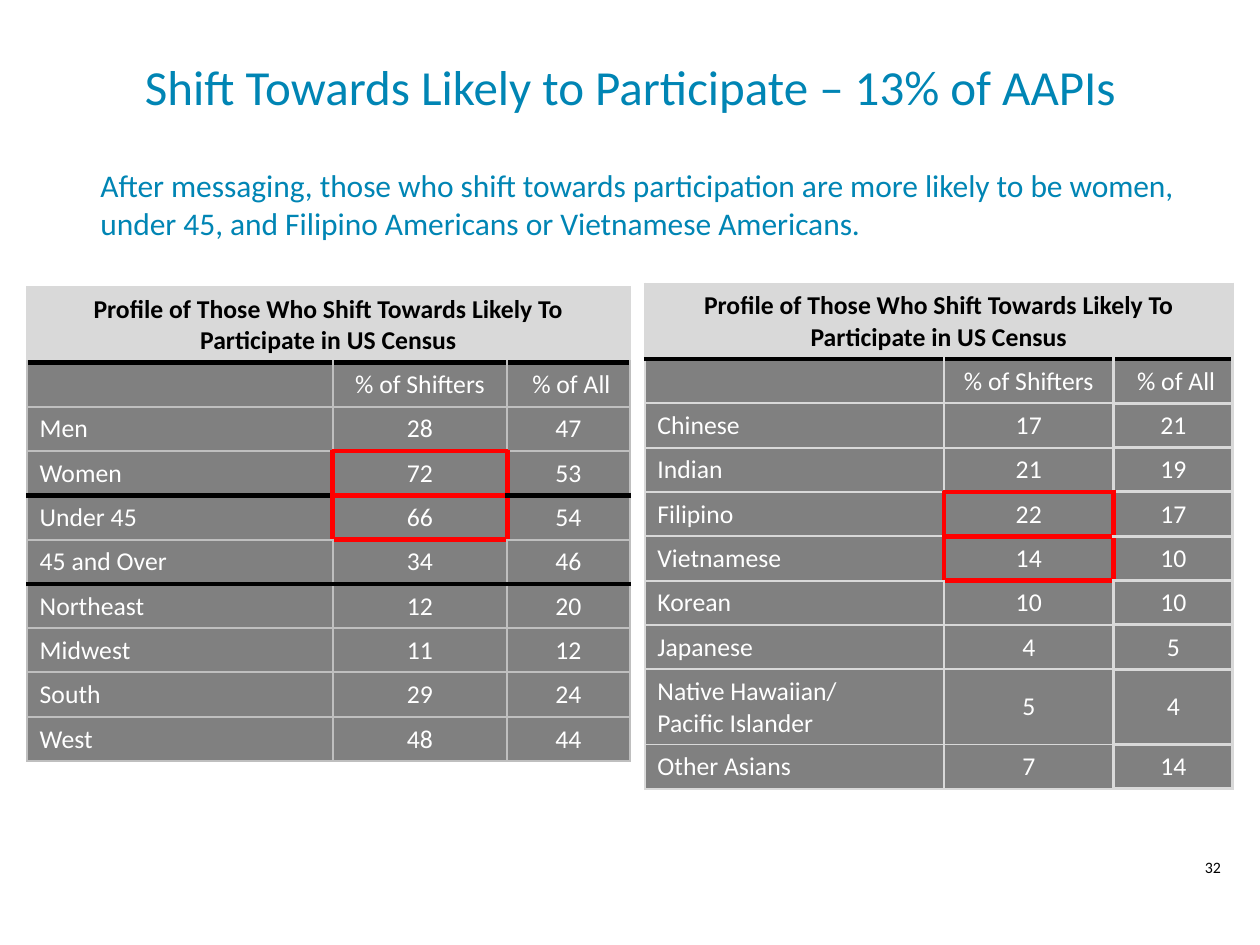
"""Build a slide with two census profile tables under a title and a summary line."""
from lxml import etree
from pptx import Presentation
from pptx.dml.color import RGBColor
from pptx.enum.text import MSO_ANCHOR, MSO_AUTO_SIZE, PP_ALIGN
from pptx.oxml.ns import qn
from pptx.util import Cm, Pt

LEFT, CENTER = PP_ALIGN.LEFT, PP_ALIGN.CENTER
MIDDLE = MSO_ANCHOR.MIDDLE
NO_AUTOFIT = MSO_AUTO_SIZE.NONE
BLUE = RGBColor(0x00, 0x85, 0xB4)
BLACK = RGBColor(0x00, 0x00, 0x00)
WHITE = RGBColor(0xFF, 0xFF, 0xFF)
RED = RGBColor(0xFF, 0x00, 0x00)
GRAY = RGBColor(0x80, 0x80, 0x80)
SILVER = RGBColor(0xBF, 0xBF, 0xBF)
LIGHT_GRAY = RGBColor(0xD9, 0xD9, 0xD9)

HEADING = "Profile of Those Who Shift Towards Likely To Participate in US Census"
COLUMN_LABELS = ("", "% of Shifters", " % of All")
ROW_HEIGHT, TALL_ROW_HEIGHT = Cm(0.67), Cm(1.14)
SIDES = {"lnL": (0, -1), "lnR": (0, 1), "lnT": (-1, 0), "lnB": (1, 0)}

PROFILES = [
    {
        "left": 0.41, "top": 4.34, "widths": (4.62, 2.64, 1.85),
        "grid": SILVER, "last_column_line": 1,
        "highlights": {(3, 1), (4, 1)}, "section_ends": {0, 3, 5},
        "rows": [
            ("Men", "28", "47"), ("Women", "72", "53"),
            ("Under 45", "66", "54"), ("45 and Over", "34", "46"),
            ("Northeast", "12", "20"), ("Midwest", "11", "12"),
            ("South", "29", "24"), ("West", "48", "44"),
        ],
    },
    {
        "left": 9.75, "top": 4.29, "widths": (4.52, 2.57, 1.8),
        "grid": LIGHT_GRAY, "last_column_line": 1.5,
        "highlights": {(4, 1), (5, 1)}, "section_ends": {0},
        "rows": [
            ("Chinese", "17", "21"), ("Indian", "21", "19"),
            ("Filipino", "22", "17"), ("Vietnamese", "14", "10"),
            ("Korean", "10", "10"), ("Japanese", "4", "5"),
            ("Native Hawaiian/\nPacific Islander", "5", "4"),
            ("Other Asians", "7", "14"),
        ],
    },
]


def write(frame, text, size, color, alignment=LEFT, bold=False):
    for index, line in enumerate(text.split("\n")):
        paragraph = frame.add_paragraph() if index else frame.paragraphs[0]
        paragraph.alignment = alignment
        paragraph.font.size = Pt(size)
        if not line:
            continue
        run = paragraph.add_run()
        run.text = line
        run.font.name = "Calibri"
        run.font.size = Pt(size)
        run.font.bold = bold
        run.font.color.rgb = color


def draw_borders(cell, row, column, profile):
    properties = cell._tc.get_or_add_tcPr()
    for side, (row_step, column_step) in SIDES.items():
        neighbor = (row + row_step, column + column_step)
        color, width = profile["grid"], 1
        if profile["highlights"] & {(row, column), neighbor}:
            color, width = RED, 2.25
        elif row_step and min(row, neighbor[0]) in profile["section_ends"]:
            color, width = BLACK, 2.25
        elif row == 0:
            color = LIGHT_GRAY
        elif 2 in (column, neighbor[1]):
            width = profile["last_column_line"]
        line = etree.SubElement(properties, qn("a:" + side), w=str(Pt(width)))
        fill = etree.SubElement(line, qn("a:solidFill"))
        etree.SubElement(fill, qn("a:srgbClr"), val=str(color))


presentation = Presentation()
presentation.slide_width, presentation.slide_height = Cm(19.05), Cm(14.29)
slide = presentation.slides.add_slide(presentation.slide_layouts[5])

title = slide.shapes.title
title.left, title.top, title.width, title.height = Cm(1.42), Cm(0.51), Cm(16.23), Cm(2.21)
title.text_frame.auto_size = NO_AUTOFIT
title.text_frame.vertical_anchor = MIDDLE
title.text_frame.margin_bottom = Cm(0.76)
write(title.text_frame, "Shift Towards Likely to Participate – 13% of AAPIs", 21, BLUE, CENTER)

page_number = slide.shapes.add_textbox(Cm(17.63), Cm(12.85), Cm(1.42), Cm(0.64))
page_number.text_frame.word_wrap = True
write(page_number.text_frame, "32", 6.8, BLACK, CENTER)

for profile in PROFILES:
    contents = [(HEADING, "", ""), COLUMN_LABELS] + profile["rows"]
    heights = [
        TALL_ROW_HEIGHT if index == 0 or "\n" in values[0] else ROW_HEIGHT
        for index, values in enumerate(contents)
    ]
    table = slide.shapes.add_table(
        len(contents), 3, Cm(profile["left"]), Cm(profile["top"]),
        Cm(sum(profile["widths"])), sum(heights),
    ).table
    table.first_row = table.horz_banding = False
    for column, width in enumerate(profile["widths"]):
        table.columns[column].width = Cm(width)
    table.cell(0, 0).merge(table.cell(0, 2))
    for row, values in enumerate(contents):
        table.rows[row].height = heights[row]
        heading = row == 0
        for column, value in enumerate(values):
            cell = table.cell(row, column)
            cell.margin_left = cell.margin_right = Cm(0.19)
            cell.margin_top = cell.margin_bottom = Cm(0.1)
            cell.vertical_anchor = MIDDLE
            draw_borders(cell, row, column, profile)
            cell.fill.solid()
            cell.fill.fore_color.rgb = LIGHT_GRAY if heading else GRAY
            write(
                cell.text_frame, value, 11, BLACK if heading else WHITE,
                CENTER if heading or column else LEFT, heading,
            )

summary = slide.shapes.add_textbox(Cm(1.27), Cm(2.39), Cm(16.84), Cm(1.42))
summary.text_frame.word_wrap = True
write(
    summary.text_frame,
    "After messaging, those who shift towards participation are more likely to be women, "
    "under 45, and Filipino Americans or Vietnamese Americans.",
    13.5, BLUE,
)

presentation.save("out.pptx")
